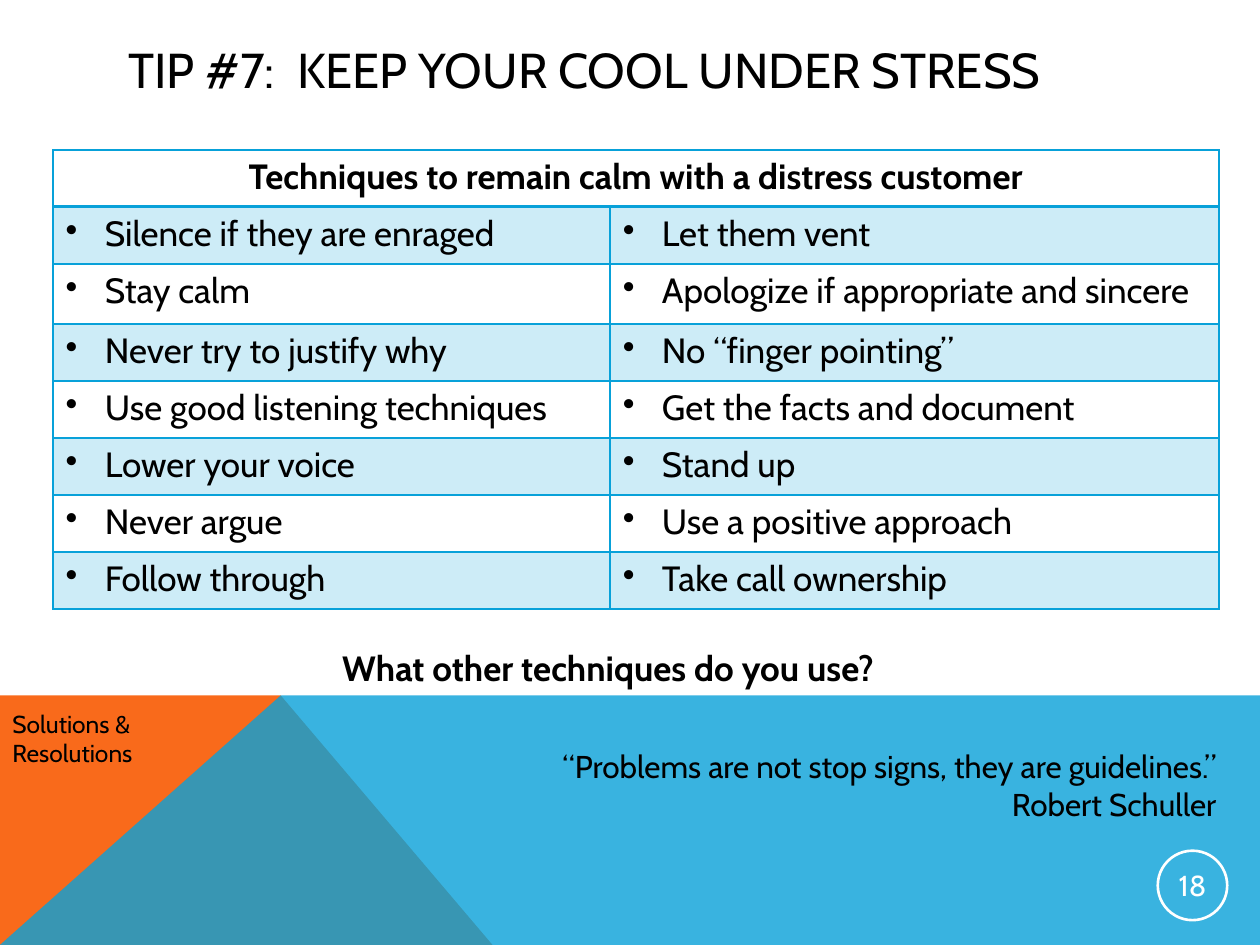
import dataclasses
import pptx
import pptx.dml.color
import pptx.enum.shapes
import pptx.enum.text
import pptx.oxml
import pptx.oxml.ns
import pptx.util

Cm = pptx.util.Cm
Pt = pptx.util.Pt
Align = pptx.enum.text.PP_ALIGN
Anchor = pptx.enum.text.MSO_ANCHOR
qn = pptx.oxml.ns.qn


@dataclasses.dataclass(frozen=True)
class Theme:
    font: str = "Cabin"
    ink: str = "000000"
    white: str = "FFFFFF"
    blue: str = "08A1D9"
    orange: str = "F96A1B"
    title: float = 28
    body: float = 20
    quote: float = 18
    page: float = 16.5
    note: float = 14


THEME = Theme()
WIDE, HIGH = 25.4, 19.05
HEAD = "Techniques to remain calm with a distress customer"
TIPS = [
    ("Silence if they are enraged", "Let them vent"),
    ("Stay calm", "Apologize if appropriate and sincere"),
    ("Never try to justify why", "No “finger pointing”"),
    ("Use good listening techniques", "Get the facts and document"),
    ("Lower your voice", "Stand up"),
    ("Never argue", "Use a positive approach"),
    ("Follow through", "Take call ownership"),
]


def paint(fill, color, alpha=100):
    fill.solid()
    fill.fore_color.rgb = pptx.dml.color.RGBColor.from_string(color)
    if alpha < 100:
        node = fill._xPr.find(qn("a:solidFill"))[0]
        pptx.oxml.ns  # noqa
        node.append(make("a:alpha", val=alpha * 1000))


def make(tag, **attrs):
    node = pptx.oxml.parse_xml(f"<{tag} {pptx.oxml.ns.nsdecls('a')}/>")
    for key, value in attrs.items():
        node.set(key, str(value))
    return node


def write(frame, text, size=THEME.body, color=THEME.ink, bold=False,
          align=Align.LEFT, anchor=Anchor.TOP, bullet=False):
    frame.word_wrap = True
    frame.vertical_anchor = anchor
    para = frame.paragraphs[0]
    para.alignment = align
    run = para.add_run()
    run.text = text
    run.font.name = THEME.font
    run.font.size = Pt(size)
    run.font.bold = bold
    run.font.color.rgb = pptx.dml.color.RGBColor.from_string(color)
    if bullet:
        props = para._p.get_or_add_pPr()
        props.set("marL", str(Cm(0.79)))
        props.set("indent", str(-Cm(0.79)))
        props.append(make("a:buChar", char="•"))


def label(slide, box, text, **form):
    shape = slide.shapes.add_textbox(*map(Cm, box))
    write(shape.text_frame, text, **form)


def shard(slide, points, color, alpha=100):
    first, *rest = [(Cm(x), Cm(y)) for x, y in points]
    path = slide.shapes.build_freeform(*first)
    path.add_line_segments(rest, close=True)
    shape = path.convert_to_shape()
    shape.shadow.inherit = False
    shape.line.fill.background()
    paint(shape.fill, color, alpha)


def edge(cell, **widths):
    props = cell._tc.get_or_add_tcPr()
    for side in "LRTB":
        line = make(f"a:ln{side}", w=Pt(widths.get(side, 1)))
        fill = make("a:solidFill")
        fill.append(make("a:srgbClr", val=THEME.blue))
        line.append(fill)
        props.append(line)


def grid(slide):
    cols = (11.23, 12.27)
    rows = [1.15] * (len(TIPS) + 1)
    rows[2] = 1.21
    frame = slide.shapes.add_table(len(rows), len(cols), Cm(1.07), Cm(3.02),
                                   Cm(sum(cols)), Cm(sum(rows)))
    table = frame.table
    table.first_row = table.horz_banding = False
    for col, width in zip(table.columns, cols):
        col.width = Cm(width)
    for row, height in zip(table.rows, rows):
        row.height = Cm(height)

    head = table.cell(0, 0)
    head.merge(table.cell(0, 1))
    write(head.text_frame, HEAD, bold=True, align=Align.CENTER)
    for cell in table.rows[0].cells:
        edge(cell, B=2)
        cell.fill.background()

    for i, pair in enumerate(TIPS, 1):
        for cell, tip in zip(table.rows[i].cells, pair):
            write(cell.text_frame, tip, bullet=True)
            edge(cell, T=2 if i == 1 else 1)
            if i % 2:
                paint(cell.fill, THEME.blue, 20)
            else:
                cell.fill.background()


def badge(slide, box, text):
    kind = pptx.enum.shapes.MSO_SHAPE.OVAL
    shape = slide.shapes.add_shape(kind, *map(Cm, box))
    shape.shadow.inherit = False
    shape.fill.background()
    paint(shape.line.fill, THEME.white)
    shape.line.width = Pt(1.5)
    frame = shape.text_frame
    frame.margin_left = frame.margin_right = Cm(0.03)
    frame.margin_top = frame.margin_bottom = Cm(0.03)
    write(frame, text, size=THEME.page, color=THEME.white,
          align=Align.CENTER, anchor=Anchor.MIDDLE)


def main():
    deck = pptx.Presentation()
    deck.slide_width, deck.slide_height = Cm(WIDE), Cm(HIGH)
    slide = deck.slides.add_slide(deck.slide_layouts[6])
    top, peak = 14.02, 5.66
    shard(slide, [(0, HIGH), (0, top), (peak, top), (9.93, HIGH)],
          THEME.orange)
    shard(slide, [(0, HIGH), (peak, top), (WIDE, top), (WIDE, HIGH)],
          THEME.blue, 80)
    label(slide, (2.34, 0.64, 20.88, 1.52),
          "TIP #7:  KEEP YOUR COOL UNDER STRESS",
          size=THEME.title, anchor=Anchor.MIDDLE)
    grid(slide)
    badge(slide, (23.34, 17.15, 1.4, 1.4), "18")
    label(slide, (0, 14.17, 4.24, 1.45), "Solutions & Resolutions",
          size=THEME.note)
    label(slide, (6.65, 12.9, 12.27, 1.12),
          "What other techniques do you use?", bold=True)
    label(slide, (9.96, 14.94, 14.81, 1.8),
          "“Problems are not stop signs, they are guidelines.” Robert Schuller",
          size=THEME.quote, align=Align.RIGHT)
    deck.save("out.pptx")


if __name__ == "__main__":
    main()
